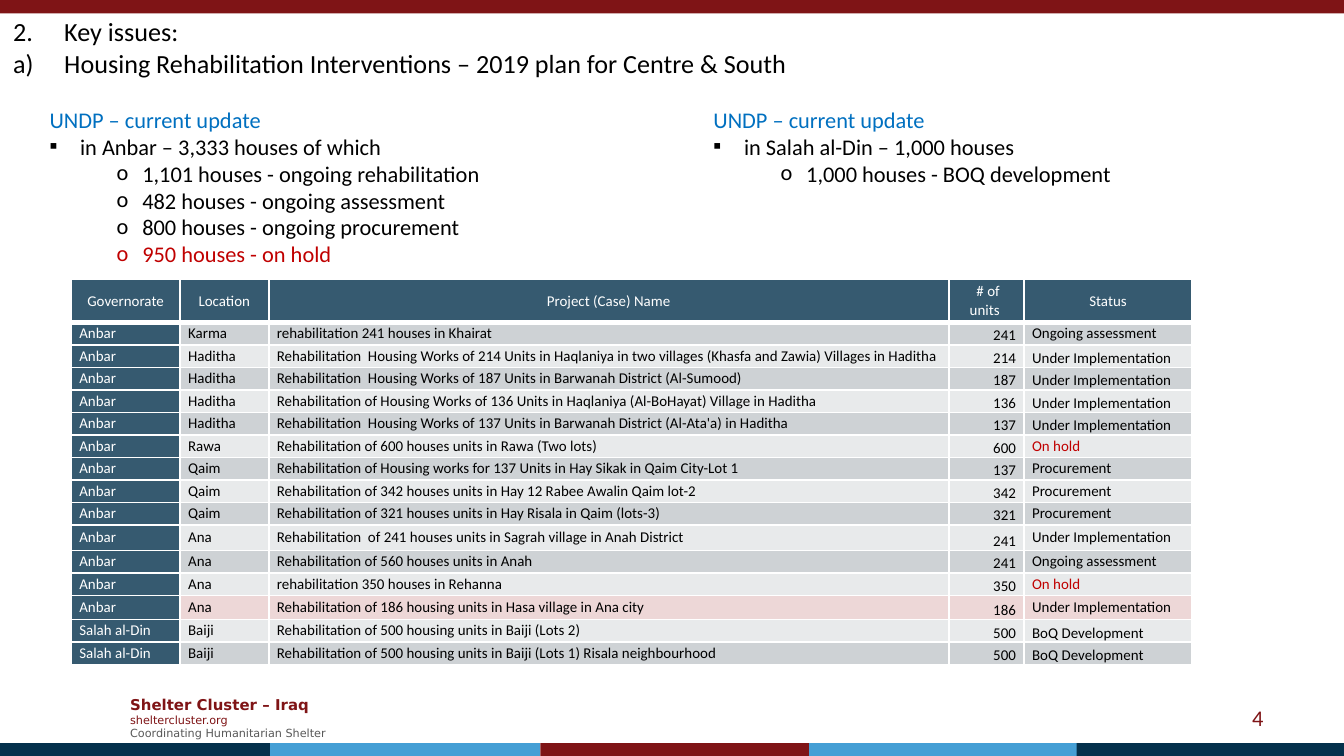
from dataclasses import dataclass

from lxml import etree
from pptx import Presentation
from pptx.dml.color import RGBColor
from pptx.enum.shapes import MSO_SHAPE
from pptx.enum.text import MSO_ANCHOR, MSO_AUTO_SIZE, PP_ALIGN
from pptx.oxml.ns import qn
from pptx.util import Inches, Pt

RECTANGLE = MSO_SHAPE.RECTANGLE
TOP, MIDDLE, BOTTOM = MSO_ANCHOR.TOP, MSO_ANCHOR.MIDDLE, MSO_ANCHOR.BOTTOM
LEFT, CENTER, RIGHT = PP_ALIGN.LEFT, PP_ALIGN.CENTER, PP_ALIGN.RIGHT
GROW, FIXED = MSO_AUTO_SIZE.SHAPE_TO_FIT_TEXT, MSO_AUTO_SIZE.NONE

COLORS = {
    "maroon": "7F1416", "navy": "04314C", "sky": "459FD5", "slate": "365A70",
    "dark_band": "CED2D5", "light_band": "E8EAEB", "highlight": "EDD7D7",
    "white": "FFFFFF", "black": "000000", "gray": "595959",
    "blue": "0070C0", "red": "C00000",
}


@dataclass
class Line:
    text: str
    size: float
    color: str = "black"
    font: str = "Calibri"
    bold: bool = False
    align: PP_ALIGN = LEFT
    level: int = 0
    indent: float = 0
    hanging: float = 0
    bullet: str = ""
    numbering: str = ""
    start: int = 1


@dataclass
class Project:
    governorate: str
    location: str
    name: str
    units: int
    status: str
    highlighted: bool = False


NBSP = chr(160)
HEADERS = ["Governorate", f"{NBSP}Location ", f"{NBSP}Project (Case) Name ",
           f"{NBSP}# of units ", f"{NBSP}Status "]
COLUMN_WIDTHS = [0.81, 0.66, 5.06, 0.56, 1.25]
TABLE_HEIGHT, HEADER_HEIGHT = 2.87, 0.32
TALL_ROWS = {10: 0.19, 13: 0.18}
BOTTOM_STATUS_LOCATIONS = ("Haditha", "Baiji")

PROJECTS = [
    Project("Anbar", "Karma", "rehabilitation 241 houses in Khairat", 241, "Ongoing assessment"),
    Project("Anbar", "Haditha", f"Rehabilitation{NBSP} Housing Works of 214 Units in Haqlaniya in two villages (Khasfa and Zawia) Villages in Haditha", 214, "Under Implementation"),
    Project("Anbar", "Haditha", f"Rehabilitation{NBSP} Housing Works of 187 Units in Barwanah District (Al-Sumood)", 187, "Under Implementation"),
    Project("Anbar", "Haditha", f"Rehabilitation{NBSP}of Housing Works of 136 Units in Haqlaniya (Al-BoHayat) Village in Haditha", 136, "Under Implementation"),
    Project("Anbar", "Haditha", f"Rehabilitation{NBSP} Housing Works of 137 Units in Barwanah District (Al-Ata'a) in Haditha", 137, "Under Implementation"),
    Project("Anbar", "Rawa", "Rehabilitation of 600 houses units in Rawa (Two lots)", 600, "On hold"),
    Project("Anbar", "Qaim", "Rehabilitation of Housing works for 137 Units in Hay Sikak in Qaim City-Lot 1", 137, "Procurement"),
    Project("Anbar", "Qaim", "Rehabilitation of 342 houses units in Hay 12 Rabee Awalin Qaim lot-2", 342, "Procurement"),
    Project("Anbar", "Qaim", "Rehabilitation of 321 houses units in Hay Risala in Qaim (lots-3)", 321, "Procurement"),
    Project("Anbar", "Ana", f"Rehabilitation{NBSP} of 241 houses units in Sagrah village in Anah District", 241, "Under Implementation"),
    Project("Anbar", "Ana", "Rehabilitation of 560 houses units in Anah", 241, "Ongoing assessment"),
    Project("Anbar", "Ana", "rehabilitation 350 houses in Rehanna", 350, "On hold"),
    Project("Anbar", "Ana", "Rehabilitation of 186 housing units in Hasa village in Ana city", 186, "Under Implementation", True),
    Project("Salah al-Din", "Baiji", "Rehabilitation of 500 housing units in Baiji (Lots 2)", 500, "BoQ Development"),
    Project("Salah al-Din", "Baiji", "Rehabilitation of 500 housing units in Baiji (Lots 1) Risala neighbourhood", 500, "BoQ Development"),
]


def rgb(color: str) -> RGBColor:
    return RGBColor.from_string(COLORS[color])


def write_line(paragraph, line: Line) -> None:
    paragraph.text = line.text
    paragraph.alignment = line.align
    paragraph.level = line.level
    properties = paragraph._p.get_or_add_pPr()
    if line.hanging:
        properties.set("marL", str(Inches(line.indent)))
        properties.set("indent", str(-Inches(line.hanging)))
    if line.bullet:
        etree.SubElement(properties, qn("a:buFont"), typeface=line.font)
        etree.SubElement(properties, qn("a:buChar"), char=line.bullet)
    if line.numbering:
        etree.SubElement(properties, qn("a:buAutoNum"), type=line.numbering, startAt=str(line.start))
    for run in paragraph.runs:
        run.font.name = line.font
        run.font.size = Pt(line.size)
        run.font.bold = line.bold
        run.font.color.rgb = rgb(line.color)


def add_text(slide, left: float, top: float, width: float, height: float,
             lines: list[Line], anchor: MSO_ANCHOR = TOP, fit: MSO_AUTO_SIZE = GROW) -> None:
    frame = slide.shapes.add_textbox(Inches(left), Inches(top), Inches(width), Inches(height)).text_frame
    frame.word_wrap = True
    frame.auto_size = fit
    frame.vertical_anchor = anchor
    for index, line in enumerate(lines):
        write_line(frame.add_paragraph() if index else frame.paragraphs[0], line)


def add_bar(slide, left: float, top: float, width: float, color: str) -> None:
    bar = slide.shapes.add_shape(RECTANGLE, Inches(left), Inches(top), Inches(width), Inches(0.1))
    bar.shadow.inherit = False
    bar.fill.solid()
    bar.fill.fore_color.rgb = rgb(color)
    bar.line.fill.background()


def fill_cell(cell, line: Line, fill: str, anchor: MSO_ANCHOR, borders: dict[str, float]) -> None:
    cell.margin_left = cell.margin_right = Inches(0.06)
    cell.margin_top = cell.margin_bottom = 0
    cell.vertical_anchor = anchor
    write_line(cell.text_frame.paragraphs[0], line)
    properties = cell._tc.get_or_add_tcPr()
    for side, width in borders.items():
        border = etree.SubElement(properties, qn(f"a:ln{side}"), w=str(Pt(width)))
        solid = etree.SubElement(border, qn("a:solidFill"))
        etree.SubElement(solid, qn("a:srgbClr"), val=COLORS["white"])
    cell.fill.solid()
    cell.fill.fore_color.rgb = rgb(fill)


def add_project_table(slide) -> None:
    table = slide.shapes.add_table(len(PROJECTS) + 1, len(HEADERS), Inches(0.53), Inches(2.08),
                                   Inches(sum(COLUMN_WIDTHS)), Inches(TABLE_HEIGHT)).table
    table.first_row = table.horz_banding = False
    for column, width in zip(table.columns, COLUMN_WIDTHS):
        column.width = Inches(width)
    regular_count = len(PROJECTS) - len(TALL_ROWS)
    regular_height = (TABLE_HEIGHT - HEADER_HEIGHT - sum(TALL_ROWS.values())) / regular_count
    heights = {0: HEADER_HEIGHT, **TALL_ROWS}
    for index, row in enumerate(table.rows):
        row.height = Inches(heights.get(index, regular_height))

    thin = {"L": 1, "R": 1, "T": 1, "B": 1}
    for column, header in enumerate(HEADERS):
        fill_cell(table.cell(0, column), Line(header, 8, "white", align=CENTER),
                  "slate", MIDDLE, {**thin, "B": 3})
    for row, project in enumerate(PROJECTS, start=1):
        band = "highlight" if project.highlighted else "dark_band" if row % 2 else "light_band"
        status_color = "red" if project.status == "On hold" else "black"
        status_anchor = BOTTOM if project.location in BOTTOM_STATUS_LOCATIONS else MIDDLE
        entries = [
            (Line(project.governorate, 8, "white"), "slate", MIDDLE),
            (Line(project.location, 8), band, MIDDLE),
            (Line(project.name, 8), band, MIDDLE),
            (Line(str(project.units), 8, align=RIGHT), band, BOTTOM),
            (Line(project.status, 8, status_color), band, status_anchor),
        ]
        borders = {**thin, "T": 3} if row == 1 else thin
        for column, (line, fill, anchor) in enumerate(entries):
            fill_cell(table.cell(row, column), line, fill, anchor, borders)


def add_update(slide, left: float, height: float, summary: str, details: list[tuple[str, str]]) -> None:
    lines = [Line("UNDP – current update", 12, "blue"),
             Line(summary, 12, indent=0.19, hanging=0.19, bullet="▪")]
    lines += [Line(text, 12, color, level=1, indent=0.69, hanging=0.19, bullet="o")
              for text, color in details]
    add_text(slide, left, 0.74, 3.51, height, lines)


def main() -> None:
    presentation = Presentation()
    presentation.slide_width, presentation.slide_height = Inches(10), Inches(10 * 9 / 16)
    slide = presentation.slides.add_slide(presentation.slide_layouts[6])

    add_text(slide, 0.87, 5.12, 1.73, 0.44, [
        Line("Shelter Cluster – Iraq", 8, "maroon", "DejaVu Sans", True),
        Line("sheltercluster.org", 6, "maroon", "DejaVu Sans"),
        Line("Coordinating Humanitarian Shelter", 6, "gray", "DejaVu Sans"),
    ], MIDDLE)
    add_bar(slide, 0, 0, 10, "maroon")
    for left, color in zip((0, 2.01, 4.02, 6.02, 8.01), ("navy", "sky", "maroon", "sky", "navy")):
        add_bar(slide, left, 5.53, 2.01, color)
    add_text(slide, 7.17, 5.19, 2.33, 0.3, [Line("4", 12, "maroon", align=RIGHT)], MIDDLE, FIXED)
    add_text(slide, 0, 0.15, 10, 0.4, [
        Line("Key issues:", 14, indent=0.38, hanging=0.38, numbering="arabicPeriod", start=2),
        Line("Housing Rehabilitation Interventions – 2019 plan for Centre & South", 14,
             indent=0.38, hanging=0.38, numbering="alphaLcParenR"),
    ], MIDDLE, FIXED)
    add_project_table(slide)
    add_update(slide, 0.27, 1.31, " in Anbar – 3,333 houses of which", [
        ("1,101 houses - ongoing rehabilitation", "black"),
        ("482 houses - ongoing assessment", "black"),
        ("800 houses - ongoing procurement", "black"),
        ("950 houses - on hold", "red"),
    ])
    add_update(slide, 5.21, 0.71, " in Salah al-Din – 1,000 houses",
               [("1,000 houses - BOQ development", "black")])
    presentation.save("out.pptx")


if __name__ == "__main__":
    main()
